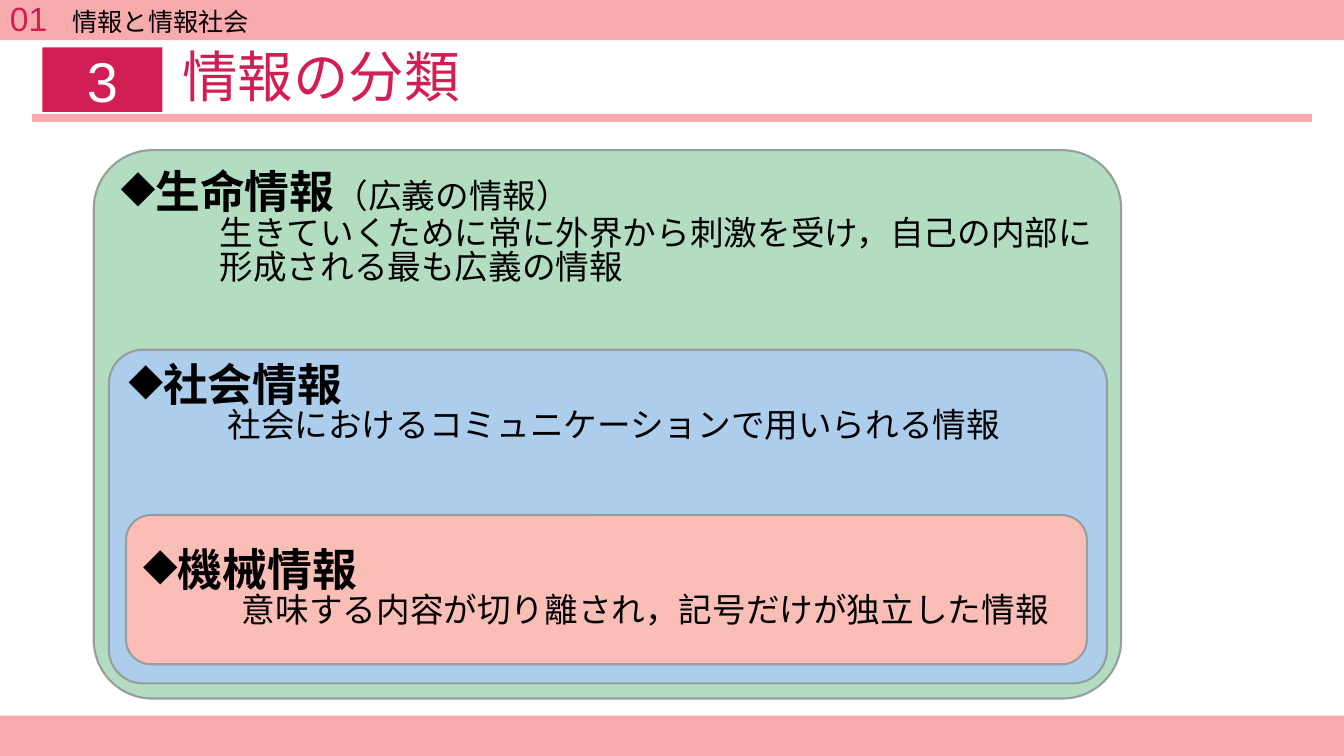
from dataclasses import dataclass

from lxml.etree import SubElement
from pptx import Presentation
from pptx.dml.color import RGBColor
from pptx.enum.shapes import MSO_CONNECTOR, MSO_SHAPE
from pptx.enum.text import MSO_ANCHOR, MSO_AUTO_SIZE, PP_ALIGN
from pptx.oxml.ns import qn
from pptx.util import Inches, Pt


@dataclass(frozen=True)
class Theme:
    # Colours
    band: str = "F8ABAD"
    accent: str = "D11F53"
    outline: str = "979E9D"
    text: str = "000000"
    inverse: str = "FFFFFF"
    life: str = "B3DDC0"
    social: str = "ADCDEC"
    machine: str = "FABEB7"
    # Fonts and sizes
    japanese: str = "Noto Sans CJK JP"
    latin: str = "Arial"
    title_size: float = 39.6
    number_size: float = 40
    heading_size: float = 32
    body_size: float = 24
    chapter_size: float = 18


class SlideBuilder:
    def __init__(self, slide, theme):
        self.slide = slide
        self.theme = theme

    def style(self, font, size, color, name=None, bold=False):
        font.name = name or self.theme.japanese
        font.size = Pt(size)
        font.bold = bold
        font.color.rgb = RGBColor.from_string(color)

    def match_east_asian(self, paragraph):
        """Use each Latin typeface for Japanese characters as well."""
        for latin in list(paragraph._p.iter(qn("a:latin"))):
            east_asian = SubElement(latin.getparent(), qn("a:ea"))
            east_asian.set("typeface", latin.get("typeface"))
            latin.addnext(east_asian)

    def title(self, text, left, top, width, height):
        title = self.slide.shapes.title
        title.left, title.top = Inches(left), Inches(top)
        title.width, title.height = Inches(width), Inches(height)
        frame = title.text_frame
        frame.text = text
        frame.auto_size = MSO_AUTO_SIZE.NONE
        frame.vertical_anchor = MSO_ANCHOR.MIDDLE
        paragraph = frame.paragraphs[0]
        paragraph.alignment = PP_ALIGN.LEFT
        paragraph.line_spacing = 0.9
        self.style(paragraph.font, self.theme.title_size, self.theme.accent)
        self.match_east_asian(paragraph)

    def block(self, kind, left, top, width, height, fill, outline=None, radius=None):
        shape = self.slide.shapes.add_shape(
            kind, Inches(left), Inches(top), Inches(width), Inches(height))
        shape.shadow.inherit = False
        shape.fill.solid()
        shape.fill.fore_color.rgb = RGBColor.from_string(fill)
        if outline:
            shape.line.color.rgb = RGBColor.from_string(outline)
            shape.line.width = Pt(1.5)
        else:
            shape.line.fill.background()
        if radius is not None:
            shape.adjustments[0] = radius
        return shape

    def category(self, bounds, fill, radius, anchor, heading, note, description):
        theme = self.theme
        box = self.block(MSO_SHAPE.ROUNDED_RECTANGLE, *bounds, fill, theme.outline, radius)
        frame = box.text_frame
        frame.word_wrap = True
        frame.vertical_anchor = anchor

        # Bulleted heading, with an optional lighter note
        head = frame.paragraphs[0]
        head.add_run().text = heading
        if note:
            self.style(head.runs[0].font, theme.heading_size, theme.text, bold=True)
            note_run = head.add_run()
            note_run.text = note
            self.style(note_run.font, theme.body_size, theme.text)
        else:
            self.style(head.font, theme.heading_size, theme.text, bold=True)

        # Indented description
        detail = frame.add_paragraph()
        detail.text = description
        detail.level = 1
        self.style(detail.font, theme.body_size, theme.text)

        for paragraph, indent in ((head, 0), (detail, 0.98)):
            paragraph.alignment = PP_ALIGN.LEFT
            paragraph.line_spacing = 0.85
            properties = paragraph._p.get_or_add_pPr()
            properties.set("marL", str(Inches(indent)))
            properties.set("indent", "0")
            self.match_east_asian(paragraph)
        self.bullet(head, "◆")

    def bullet(self, paragraph, symbol):
        properties = paragraph._p.get_or_add_pPr()
        bullet = SubElement(properties, qn("a:buChar"))
        bullet.set("char", symbol)
        defaults = properties.find(qn("a:defRPr"))
        if defaults is not None:
            defaults.addprevious(bullet)

    def section_number(self, text, *bounds):
        badge = self.block(MSO_SHAPE.ROUNDED_RECTANGLE, *bounds, self.theme.accent, radius=0)
        frame = badge.text_frame
        frame.text = text
        frame.vertical_anchor = MSO_ANCHOR.MIDDLE
        paragraph = frame.paragraphs[0]
        paragraph.alignment = PP_ALIGN.CENTER
        self.style(paragraph.font, self.theme.number_size, self.theme.inverse, self.theme.latin)

    def chapter(self, number, name, left, top, width, height):
        theme = self.theme
        label = self.slide.shapes.add_textbox(
            Inches(left), Inches(top), Inches(width), Inches(height))
        frame = label.text_frame
        frame.word_wrap = True
        frame.vertical_anchor = MSO_ANCHOR.MIDDLE
        paragraph = frame.paragraphs[0]
        paragraph.line_spacing = 0.9
        number_run, name_run = paragraph.add_run(), paragraph.add_run()
        number_run.text, name_run.text = number, name
        self.style(number_run.font, theme.body_size, theme.accent, theme.latin)
        self.style(name_run.font, theme.chapter_size, theme.text)
        self.match_east_asian(paragraph)

    def rule(self, left, right, y):
        rule = self.slide.shapes.add_connector(
            MSO_CONNECTOR.STRAIGHT, Inches(left), Inches(y), Inches(right), Inches(y))
        rule.line.color.rgb = RGBColor.from_string(self.theme.band)
        rule.line.width = Pt(6)
        SubElement(rule._element.spPr, qn("a:effectLst"))


def main():
    theme = Theme()
    presentation = Presentation()
    presentation.slide_width, presentation.slide_height = Inches(13.33), Inches(7.5)
    slide = presentation.slides.add_slide(presentation.slide_layouts[5])
    builder = SlideBuilder(slide, theme)

    # Title and the bands at the slide's edges
    builder.title("情報の分類", 1.71, 0.47, 11.3, 0.64)
    for band_top in (0, 7.1):
        builder.block(MSO_SHAPE.RECTANGLE, 0, band_top, 13.33, 0.4, theme.band)

    # Nested categories, from the widest to the narrowest
    categories = (
        ((0.93, 1.49, 10.19, 5.44), theme.life, 0.107, MSO_ANCHOR.TOP,
         "生命情報", "（広義の情報）",
         "生きていくために常に外界から刺激を受け，自己の内部に形成される最も広義の情報"),
        ((1.08, 3.47, 9.9, 3.31), theme.social, 0.102, MSO_ANCHOR.TOP,
         "社会情報", None, "社会におけるコミュニケーションで用いられる情報"),
        ((1.25, 5.11, 9.53, 1.48), theme.machine, None, MSO_ANCHOR.MIDDLE,
         "機械情報", None, "意味する内容が切り離され，記号だけが独立した情報"),
    )
    for category in categories:
        builder.category(*category)

    # Section number, chapter label and rule below the title
    builder.section_number("3", 0.42, 0.47, 1.19, 0.64)
    builder.chapter("01", "　情報と情報社会", 0, 0, 4.34, 0.4)
    builder.rule(0.32, 13.01, 1.17)

    presentation.save("out.pptx")


if __name__ == "__main__":
    main()
